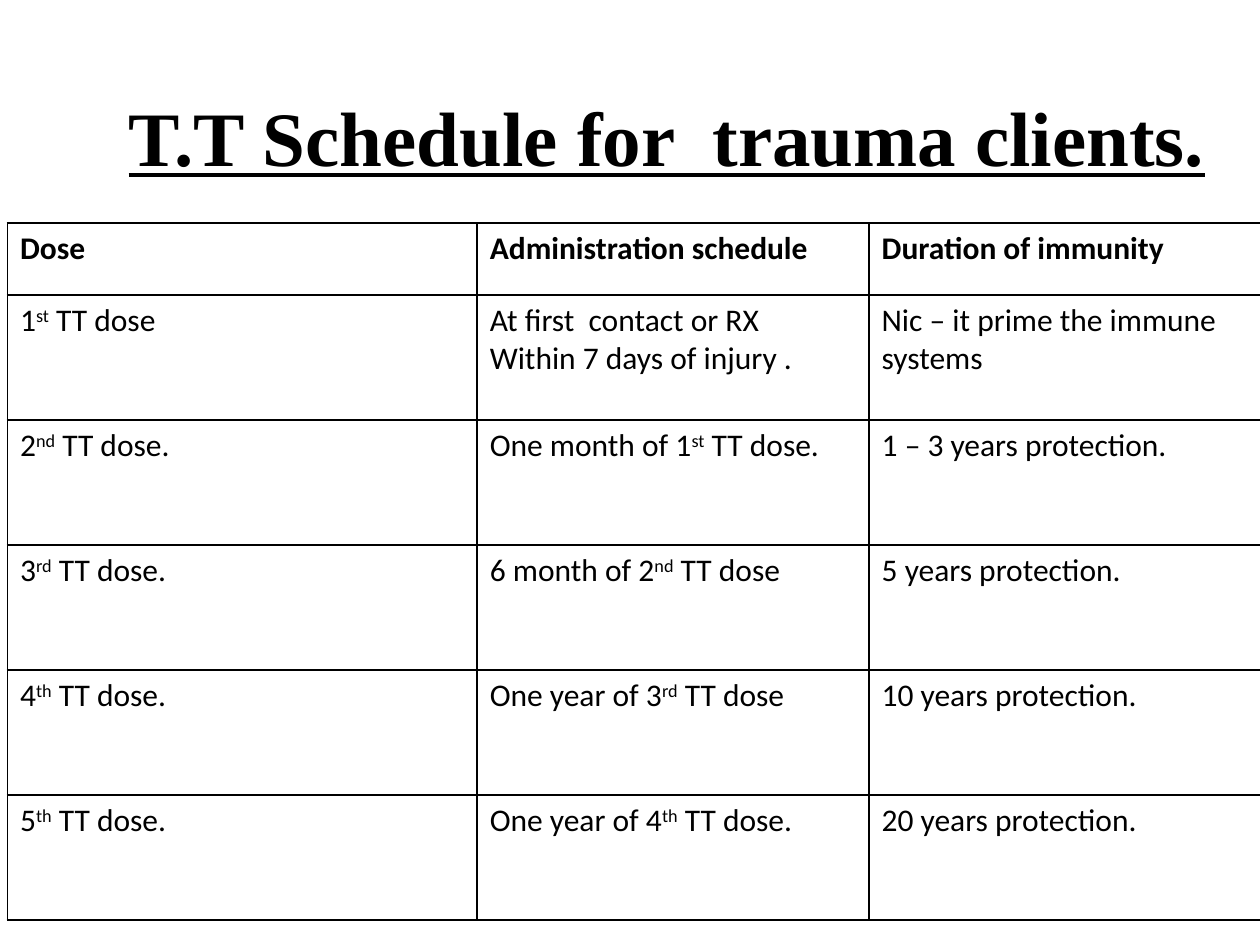
from lxml import etree
from pptx import Presentation
from pptx import util as u
from pptx.dml.color import RGBColor
from pptx.enum import text
from pptx.oxml.ns import qn

BLACK = "000000"
COLUMN_WIDTHS = [9.47, 7.9, 7.9]
ROW_HEIGHTS = [1.45] + [2.52] * 5
ROWS = [
    ["Dose", "Administration schedule", "Duration of immunity"],
    ["1^st^ TT dose", "At first  contact or RX\nWithin 7 days of injury .",
     "Nic – it prime the immune systems"],
    ["2^nd^ TT dose.", "One month of 1^st^ TT dose.", "1 – 3 years protection."],
    ["3^rd^ TT dose.", "6 month of 2^nd^ TT dose", "5 years protection."],
    ["4^th^ TT dose.", "One year of 3^rd^ TT dose", "10 years protection."],
    ["5^th^ TT dose.", "One year of 4^th^ TT dose.", "20 years protection."],
]


def color(value):
    return RGBColor.from_string(value)


def set_font(paragraph, name, size, bold):
    font = paragraph.font
    font.name, font.size, font.bold = name, u.Pt(size), bold
    font.color.rgb = color(BLACK)


def add_title(slide, words):
    title = slide.shapes.title
    title.left, title.top = u.Cm(2.34), u.Cm(1.02)
    title.width, title.height = u.Cm(29.21), u.Cm(3.68)
    frame = title.text_frame
    frame.text = words
    frame.word_wrap = True
    frame.auto_size = text.MSO_AUTO_SIZE.NONE
    frame.vertical_anchor = text.MSO_ANCHOR.MIDDLE
    paragraph = frame.paragraphs[0]
    paragraph.alignment = text.PP_ALIGN.LEFT
    paragraph.line_spacing = 0.9
    set_font(paragraph, "Times New Roman", 44, True)
    paragraph.font.underline = True


def add_borders(cell):
    properties = cell._tc.get_or_add_tcPr()
    for side in ("lnL", "lnR", "lnT", "lnB"):
        line = etree.SubElement(properties, qn(f"a:{side}"), w=str(u.Pt(1)))
        fill = etree.SubElement(line, qn("a:solidFill"))
        etree.SubElement(fill, qn("a:srgbClr"), val=BLACK)


def fill_cell(cell, words, bold):
    add_borders(cell)
    cell.fill.background()
    frame = cell.text_frame
    for index, line in enumerate(words.split("\n")):
        paragraph = frame.add_paragraph() if index else frame.paragraphs[0]
        set_font(paragraph, "Calibri", 18, bold)
        for position, part in enumerate(line.split("^")):
            run = paragraph.add_run()
            run.text = part
            if position % 2:
                run._r.get_or_add_rPr().set("baseline", "30000")


def add_schedule(slide):
    frame = slide.shapes.add_table(
        len(ROWS), len(COLUMN_WIDTHS), u.Cm(0.15), u.Cm(4.5),
        u.Cm(sum(COLUMN_WIDTHS)), u.Cm(sum(ROW_HEIGHTS)))
    table = frame.table
    table.first_row = table.horz_banding = False
    for column, width in zip(table.columns, COLUMN_WIDTHS):
        column.width = u.Cm(width)
    for index, (row, height) in enumerate(zip(table.rows, ROW_HEIGHTS)):
        row.height = u.Cm(height)
        for cell, words in zip(row.cells, ROWS[index]):
            fill_cell(cell, words, index == 0)


def main():
    presentation = Presentation()
    presentation.slide_width, presentation.slide_height = u.Cm(25.4), u.Cm(19.05)
    slide = presentation.slides.add_slide(presentation.slide_layouts[5])
    add_title(slide, "T.T Schedule for  trauma clients.")
    add_schedule(slide)
    presentation.save("out.pptx")


if __name__ == "__main__":
    main()
